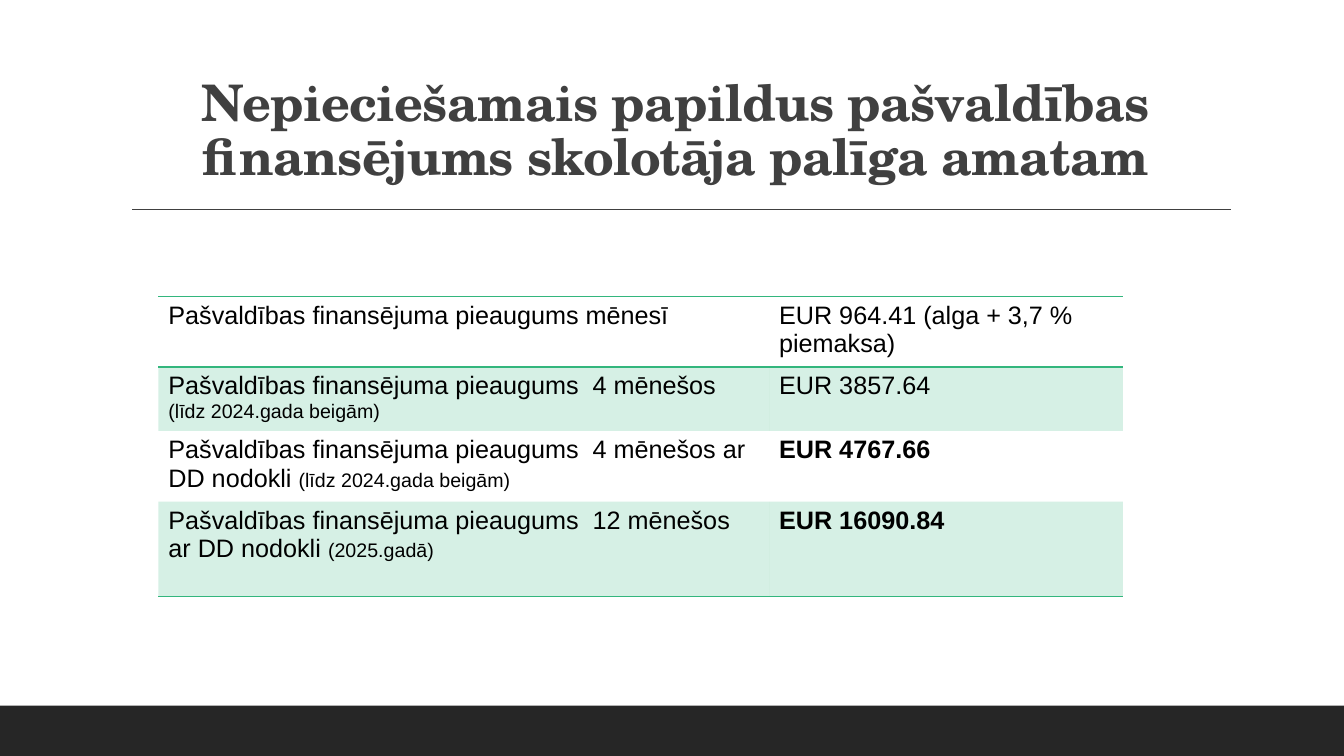
from dataclasses import dataclass

import lxml.etree
import pptx
import pptx.dml.color
import pptx.enum.shapes
import pptx.enum.text
import pptx.oxml
import pptx.oxml.ns
import pptx.util

Cm = pptx.util.Cm
Pt = pptx.util.Pt
qn = pptx.oxml.ns.qn


@dataclass(frozen=True)
class Theme:
    title_font: str = "TeX Gyre Schola"
    body_font: str = "Arial"
    title_size: float = 36
    body_size: float = 18
    note_size: float = 14
    rule_width: float = 1
    heading: str = "404040"
    body: str = "000000"
    footer: str = "262626"
    accent: str = "33B67D"
    band_opacity: int = 20
    plain_table: str = "{2D5ABB26-0587-4C30-8999-92F81FD0307C}"


THEME = Theme()
TITLE = "Nepieciešamais papildus pašvaldības finansējums skolotāja palīga amatam"
INCREASE = "Pašvaldības finansējuma pieaugums "
FUNDING = [
    (INCREASE + "mēnesī", "", "EUR 964.41 (alga + 3,7 % piemaksa)", False, 1.67),
    (INCREASE + " 4 mēnešos ", "(līdz 2024.gada beigām)", "EUR 3857.64", False, 1.53),
    (INCREASE + " 4 mēnešos ar DD nodokli ", "(līdz 2024.gada beigām)", "EUR 4767.66", True, 1.67),
    (INCREASE + " 12 mēnešos ar DD nodokli ", "(2025.gadā)", "EUR 16090.84", True, 2.4),
]


def rgb(value):
    return pptx.dml.color.RGBColor.from_string(value)


def add_run(paragraph, text, font, size, color, bold=False):
    run = paragraph.add_run()
    run.text = text
    run.font.name = font
    run.font.size = Pt(size)
    run.font.bold = bold
    run.font.color.rgb = rgb(color)
    return run


def add_footer(slide, left, top, width, height):
    band = slide.shapes.add_shape(
        pptx.enum.shapes.MSO_SHAPE.RECTANGLE, Cm(left), Cm(top), Cm(width), Cm(height)
    )
    band.shadow.inherit = False
    band.fill.solid()
    band.fill.fore_color.rgb = rgb(THEME.footer)
    band.line.fill.background()


def add_heading(slide, left, top, width, height):
    rule_y = Cm(top + height + 0.45)
    rule = slide.shapes.add_connector(
        pptx.enum.shapes.MSO_CONNECTOR.STRAIGHT,
        Cm(left + 0.28), rule_y, Cm(left + width + 0.02), rule_y,
    )
    rule.line.color.rgb = rgb(THEME.heading)
    rule.line.width = Pt(THEME.rule_width)
    lxml.etree.SubElement(rule._element.spPr, qn("a:effectLst"))

    heading = slide.shapes.add_textbox(Cm(left), Cm(top), Cm(width), Cm(height)).text_frame
    heading.word_wrap = True
    heading.vertical_anchor = pptx.enum.text.MSO_ANCHOR.BOTTOM
    paragraph = heading.paragraphs[0]
    paragraph.alignment = pptx.enum.text.PP_ALIGN.CENTER
    paragraph.line_spacing = 0.9
    run = add_run(paragraph, TITLE, THEME.title_font, THEME.title_size, THEME.heading, True)
    run.font._element.set("spc", "-50")


def add_border(cell, side):
    properties = cell._tc.get_or_add_tcPr()
    border = lxml.etree.SubElement(properties, qn("a:" + side), w=str(Pt(THEME.rule_width)))
    fill = lxml.etree.SubElement(border, qn("a:solidFill"))
    lxml.etree.SubElement(fill, qn("a:srgbClr"), val=THEME.accent)


def fill_cell(cell, banded):
    if not banded:
        cell.fill.background()
        return
    cell.fill.solid()
    cell.fill.fore_color.rgb = rgb(THEME.accent)
    color = cell._tc.tcPr.find(qn("a:solidFill")).find(qn("a:srgbClr"))
    lxml.etree.SubElement(color, qn("a:alpha"), val=str(THEME.band_opacity * 1000))


def add_funding_table(slide, left, top, width, height):
    table = slide.shapes.add_table(
        len(FUNDING), 2, Cm(left), Cm(top), Cm(width), Cm(height)
    ).table
    table.first_row = False
    table.horz_banding = False
    table._tbl.tblPr.find(qn("a:tableStyleId")).text = THEME.plain_table
    amount_width = 8.92
    table.columns[0].width = Cm(width - amount_width)
    table.columns[1].width = Cm(amount_width)

    last = len(FUNDING) - 1
    for index, (label, period, amount, bold, row_height) in enumerate(FUNDING):
        table.rows[index].height = Cm(row_height)
        label_cell, amount_cell = table.rows[index].cells
        for cell in (label_cell, amount_cell):
            if index == 0:
                add_border(cell, "lnT")
            if index in (0, last):
                add_border(cell, "lnB")
            fill_cell(cell, index % 2 == 1)
        label_text = label_cell.text_frame.paragraphs[0]
        add_run(label_text, label, THEME.body_font, THEME.body_size, THEME.body)
        if period:
            add_run(label_text, period, THEME.body_font, THEME.note_size, THEME.body)
        amount_text = amount_cell.text_frame.paragraphs[0]
        add_run(amount_text, amount, THEME.body_font, THEME.body_size, THEME.body, bold)


def main():
    deck = pptx.Presentation()
    deck.slide_width = Cm(33.87)
    deck.slide_height = Cm(19.05)
    slide = deck.slides.add_slide(deck.slide_layouts[6])
    add_footer(slide, 0, 17.78, 33.87, 1.27)
    add_heading(slide, 3.05, 0.79, 27.94, 4.04)
    add_funding_table(slide, 3.99, 7.47, 24.31, sum(row[-1] for row in FUNDING))
    deck.save("out.pptx")


if __name__ == "__main__":
    main()
